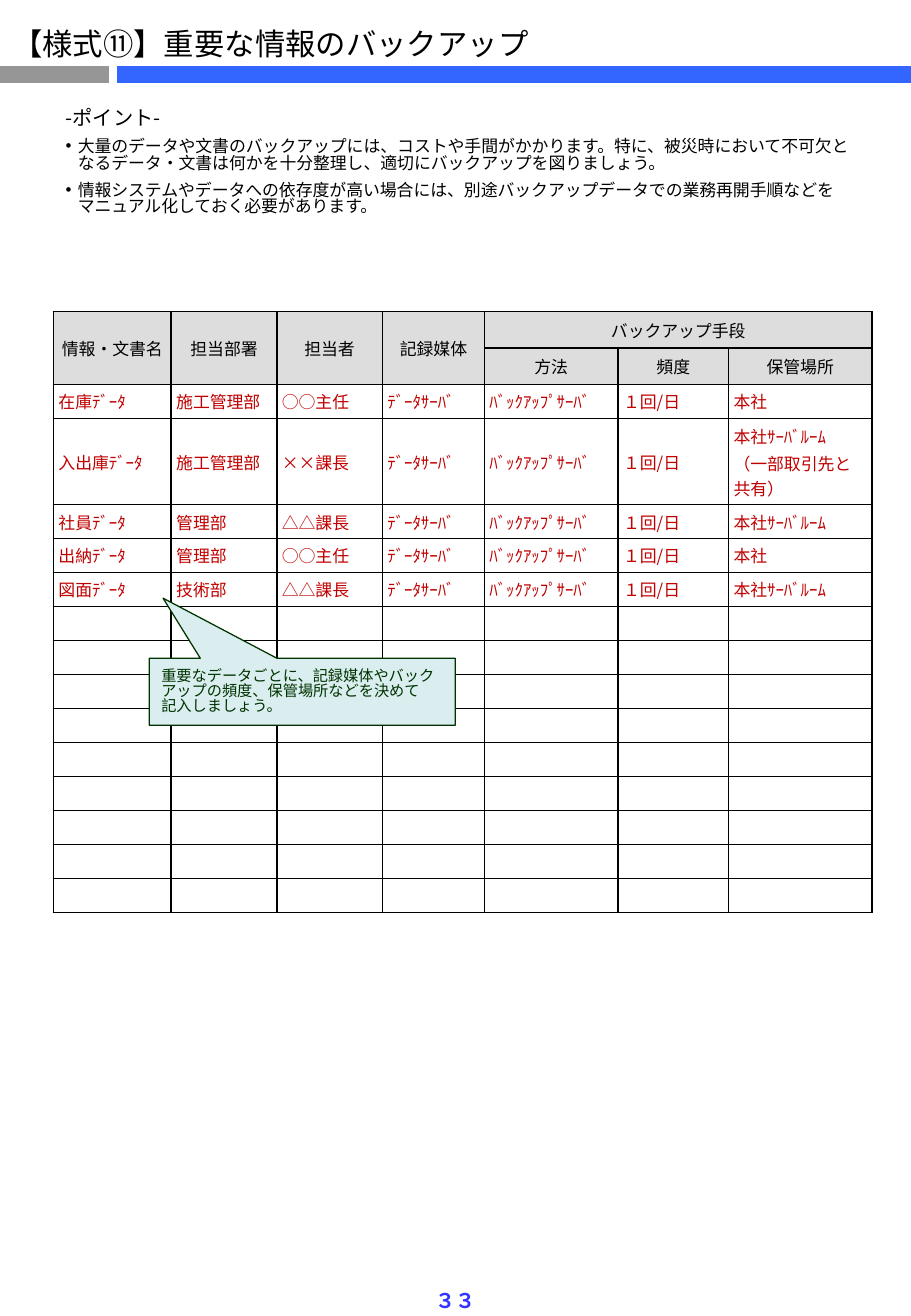
"""Build the backup planning form, with its key points, table and callout."""
from dataclasses import dataclass
from typing import Any

import lxml.etree
import pptx
import pptx.dml.color
import pptx.enum.shapes
import pptx.enum.text
import pptx.oxml.ns
import pptx.util

Pt = pptx.util.Pt
qn = pptx.oxml.ns.qn
ALIGN = pptx.enum.text.PP_ALIGN
MIDDLE = pptx.enum.text.MSO_ANCHOR.MIDDLE


@dataclass(frozen=True)
class Theme:
    font: str = "Noto Sans CJK JP"
    ink: str = "000000"
    entry: str = "C00000"
    header_fill: str = "DDDDDD"
    grey_rule: str = "969696"
    blue_rule: str = "3366FF"
    page_number: str = "3333FF"
    callout_fill: str = "DAEDEF"
    callout_ink: str = "003300"
    title_size: float = 18
    heading_size: float = 12
    text_size: float = 10
    callout_size: float = 9
    tight_spacing: float = 0.82


@dataclass(frozen=True)
class Rule:
    start: float
    end: float
    color: str


@dataclass(frozen=True)
class Point:
    text: str
    size: float
    bulleted: bool


@dataclass(frozen=True)
class Entry:
    document: str
    department: str
    person: str
    place: str
    medium: str = "ﾃﾞｰﾀｻｰﾊﾞ"
    method: str = "ﾊﾞｯｸｱｯﾌﾟｻｰﾊﾞ"
    frequency: str = "１回/日"

    def texts(self) -> list[str]:
        return [self.document, self.department, self.person, self.medium,
                self.method, self.frequency, self.place]


THEME = Theme()
PAGE_WIDTH, PAGE_HEIGHT = 540, 779.76
RULE_Y, RULE_WEIGHT = 44.1, 10
RULES = [Rule(0, 64.6, THEME.grey_rule), Rule(69.3, PAGE_WIDTH, THEME.blue_rule)]
POINTS = [
    Point("-ポイント-", THEME.heading_size, False),
    Point("大量のデータや文書のバックアップには、コストや手間がかかります。特に、被災時において不可欠と"
          "なるデータ・文書は何かを十分整理し、適切にバックアップを図りましょう。", THEME.text_size, True),
    Point("情報システムやデータへの依存度が高い場合には、別途バックアップデータでの業務再開手順などを\v"
          "マニュアル化しておく必要があります。", THEME.text_size, True),
]
COLUMN_WIDTHS = [69.8, 62.6, 62.6, 60.5, 79.2, 65.5, 85]
HEADERS = [
    ["情報・文書名", "担当部署", "担当者", "記録媒体", "バックアップ手段", "", ""],
    ["", "", "", "", "方法", "頻度", "保管場所"],
]
ENTRIES = [
    Entry("在庫ﾃﾞｰﾀ", "施工管理部", "○○主任", "本社"),
    Entry("入出庫ﾃﾞｰﾀ", "施工管理部", "××課長", "本社ｻｰﾊﾞﾙｰﾑ\n（一部取引先と共有）"),
    Entry("社員ﾃﾞｰﾀ", "管理部", "△△課長", "本社ｻｰﾊﾞﾙｰﾑ"),
    Entry("出納ﾃﾞｰﾀ", "管理部", "○○主任", "本社"),
    Entry("図面ﾃﾞｰﾀ", "技術部", "△△課長", "本社ｻｰﾊﾞﾙｰﾑ"),
]
BLANK_ROWS = 9
HEADER_HEIGHT, ROW_HEIGHT, TALL_HEIGHT = 21.7, 20.15, 51


def rgb(color: str) -> pptx.dml.color.RGBColor:
    return pptx.dml.color.RGBColor.from_string(color)


def style_paragraph(para: Any, size: float, color: str, bold: bool = False) -> None:
    for span in para.runs:
        span.font.size = Pt(size)
        span.font.bold = bold
        span.font.color.rgb = rgb(color)
        span.font.name = THEME.font
        lxml.etree.SubElement(span.font._element, qn("a:ea"), typeface=THEME.font)
    for line_break in para._p.findall(qn("a:br")):
        lxml.etree.SubElement(line_break, qn("a:rPr"), sz=str(int(size * 100)))
    if not para.runs:
        lxml.etree.SubElement(para._p, qn("a:endParaRPr"), sz=str(int(size * 100)))


def place(shape: Any, left: float, top: float, width: float, height: float) -> None:
    shape.left, shape.top, shape.width, shape.height = map(Pt, (left, top, width, height))


def draw_rule(page: Any, rule: Rule) -> None:
    line = page.shapes.add_connector(pptx.enum.shapes.MSO_CONNECTOR.STRAIGHT, Pt(rule.start),
                                     Pt(RULE_Y), Pt(rule.end), Pt(RULE_Y))
    line.line.color.rgb = rgb(rule.color)
    line.line.width = Pt(RULE_WEIGHT)
    lxml.etree.SubElement(line._element.spPr, qn("a:effectLst"))


def fill_title(title: Any) -> None:
    place(title, 0, 11.5, 323.3, 28.8)
    frame = title.text_frame
    frame.text = "【様式⑪】重要な情報のバックアップ"
    frame.word_wrap = False
    frame.auto_size = pptx.enum.text.MSO_AUTO_SIZE.NONE
    frame.vertical_anchor = MIDDLE
    frame.paragraphs[0].alignment = ALIGN.LEFT
    style_paragraph(frame.paragraphs[0], THEME.title_size, THEME.ink)


def fill_points(body: Any) -> None:
    place(body, 31.7, 61.2, 481.7, 103)
    frame = body.text_frame
    frame.auto_size = pptx.enum.text.MSO_AUTO_SIZE.NONE
    frame.text = "\n" * (len(POINTS) - 1)
    for para, point in zip(frame.paragraphs, POINTS):
        para.text = point.text
        para.line_spacing = THEME.tight_spacing
        para.space_before, para.space_after = Pt(0), Pt(6)
        properties = para._p.get_or_add_pPr()
        properties.set("marL", str(Pt(7.2)))
        properties.set("indent", str(Pt(-7.2)))
        if point.bulleted:
            lxml.etree.SubElement(properties, qn("a:buChar"), char="•")
        else:
            lxml.etree.SubElement(properties, qn("a:buNone"))
        style_paragraph(para, point.size, THEME.ink)


def add_borders(cell: Any) -> None:
    properties = cell._tc.get_or_add_tcPr()
    for side in ("lnL", "lnR", "lnT", "lnB"):
        border = lxml.etree.SubElement(properties, qn(f"a:{side}"), w=str(Pt(1)))
        fill = lxml.etree.SubElement(border, qn("a:solidFill"))
        lxml.etree.SubElement(fill, qn("a:srgbClr"), val=THEME.ink)


def fill_cell(cell: Any, text: str, is_header: bool) -> None:
    add_borders(cell)
    if is_header:
        cell.fill.solid()
        cell.fill.fore_color.rgb = rgb(THEME.header_fill)
    else:
        cell.fill.background()
    cell.vertical_anchor = MIDDLE
    cell.margin_left = cell.margin_right = Pt(3)
    cell.margin_top = cell.margin_bottom = Pt(3.6 if is_header else 2.8)
    cell.text_frame.text = text
    for index, para in enumerate(cell.text_frame.paragraphs):
        para.alignment = ALIGN.CENTER if is_header else ALIGN.LEFT
        para.space_before = Pt(2 if index else 0)
        style_paragraph(para, THEME.text_size, THEME.ink if is_header else THEME.entry)


def draw_table(page: Any) -> None:
    blanks = [[""] * len(COLUMN_WIDTHS)] * BLANK_ROWS
    rows = HEADERS + [entry.texts() for entry in ENTRIES] + blanks
    heights = [HEADER_HEIGHT if index < len(HEADERS) else
               TALL_HEIGHT if "\n" in texts[-1] else ROW_HEIGHT for index, texts in enumerate(rows)]
    table = page.shapes.add_table(len(rows), len(COLUMN_WIDTHS), Pt(31.7), Pt(184.6),
                                  Pt(sum(COLUMN_WIDTHS)), Pt(sum(heights))).table
    table.first_row = table.horz_banding = False
    for column, width in zip(table.columns, COLUMN_WIDTHS):
        column.width = Pt(width)
    for row_index, texts in enumerate(rows):
        table.rows[row_index].height = Pt(heights[row_index])
        for column_index, text in enumerate(texts):
            fill_cell(table.cell(row_index, column_index), text, row_index < len(HEADERS))
    for column_index in range(4):
        table.cell(0, column_index).merge(table.cell(1, column_index))
    table.cell(0, 4).merge(table.cell(0, 6))


def draw_callout(page: Any) -> None:
    callout = page.shapes.add_shape(pptx.enum.shapes.MSO_SHAPE.RECTANGULAR_CALLOUT,
                                    Pt(88.5), Pt(390), Pt(181.4), Pt(39.7))
    callout.adjustments[0], callout.adjustments[1] = -0.455, -1.396
    callout.shadow.inherit = False
    callout.fill.solid()
    callout.fill.fore_color.rgb = rgb(THEME.callout_fill)
    callout.line.color.rgb = rgb(THEME.callout_ink)
    callout.line.width = Pt(0.75)
    frame = callout.text_frame
    frame.word_wrap = True
    frame.vertical_anchor = MIDDLE
    frame.text = "重要なデータごとに、記録媒体やバックアップの頻度、保管場所などを決めて\n記入しましょう。"
    for para in frame.paragraphs:
        para.alignment = ALIGN.LEFT
        para.line_spacing = THEME.tight_spacing
        style_paragraph(para, THEME.callout_size, THEME.callout_ink)


def draw_page_number(page: Any) -> None:
    box = page.shapes.add_textbox(Pt(250.6), Pt(759.6), Pt(38.9), Pt(22.3))
    box.text_frame.text = "３３"
    box.text_frame.word_wrap = False
    para = box.text_frame.paragraphs[0]
    para.alignment = ALIGN.CENTER
    style_paragraph(para, THEME.heading_size, THEME.page_number, bold=True)


def main() -> None:
    deck = pptx.Presentation()
    deck.slide_width, deck.slide_height = Pt(PAGE_WIDTH), Pt(PAGE_HEIGHT)
    page = deck.slides.add_slide(deck.slide_layouts[1])
    for rule in RULES:
        draw_rule(page, rule)
    fill_title(page.shapes.title)
    fill_points(page.placeholders[1])
    draw_table(page)
    draw_callout(page)
    draw_page_number(page)
    deck.save("out.pptx")


if __name__ == "__main__":
    main()
